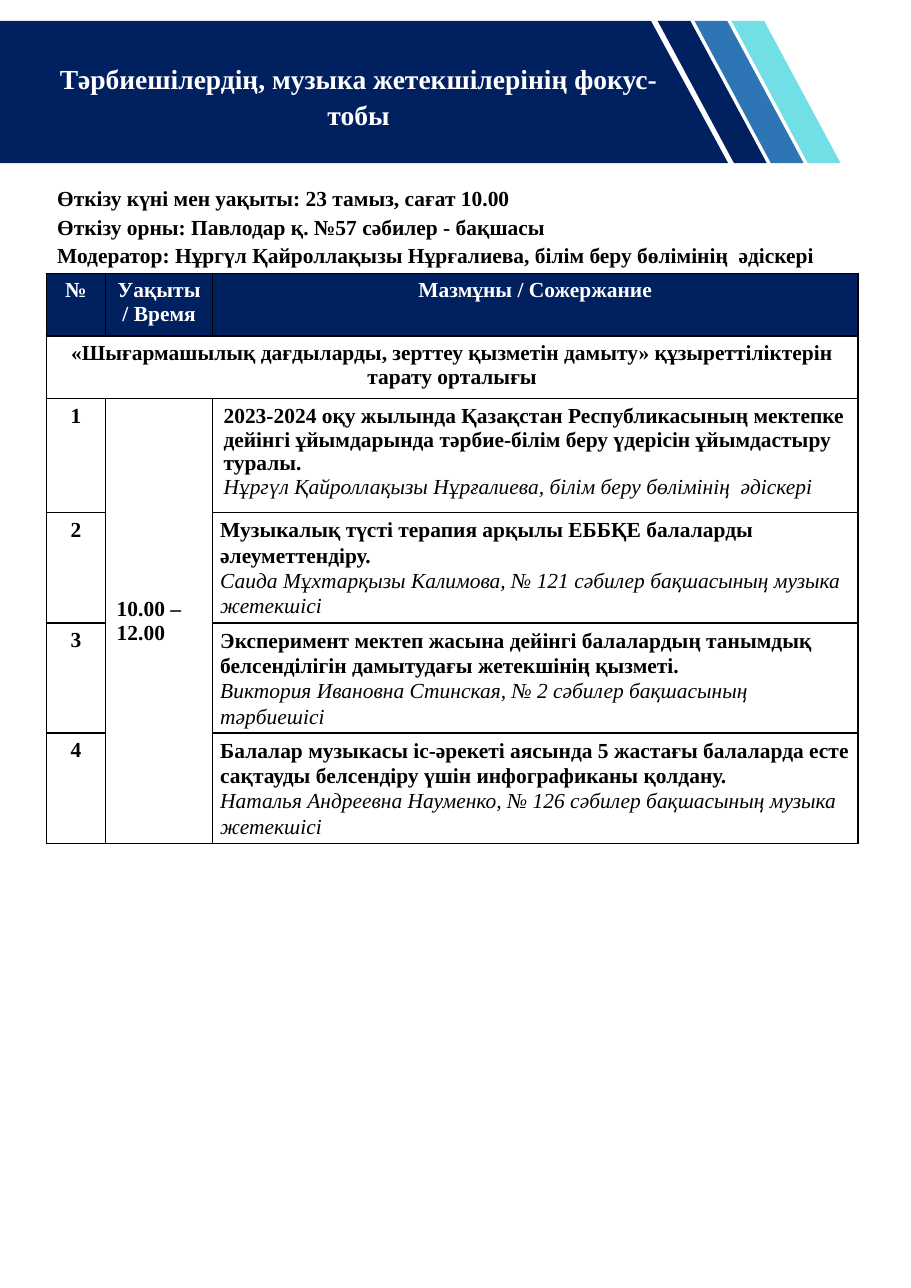
import pptx
import pptx.util
import pptx.dml.color
import pptx.enum.shapes
import pptx.enum.text
import pptx.oxml
import pptx.oxml.ns

Inches = pptx.util.Inches
ALIGN = pptx.enum.text.PP_ALIGN
ANCHOR = pptx.enum.text.MSO_ANCHOR

# Content
COLORS = {"navy": "002060", "blue": "2E75B6", "aqua": "71DFE5",
          "white": "FFFFFF", "black": "000000"}
FONT = "Times New Roman"
TITLE = "Тәрбиешілердің, музыка жетекшілерінің фокус-тобы"
DETAILS = [
    "Өткізу күні мен уақыты: 23 тамыз, сағат 10.00",
    "Өткізу орны: Павлодар қ. №57 сәбилер - бақшасы",
    "Модератор: Нұргүл Қайроллақызы Нұрғалиева, білім беру бөлімінің  әдіскері",
]
HEADERS = ["№", "Уақыты / Время", "Мазмұны / Сожержание"]
SECTION = ("«Шығармашылық дағдыларды, зерттеу қызметін дамыту» "
           "құзыреттіліктерін тарату орталығы")
TIME = "10.00 – 12.00"
TALKS = [
    ("2023-2024 оқу жылында Қазақстан Республикасының мектепке дейінгі "
     "ұйымдарында тәрбие-білім беру үдерісін ұйымдастыру туралы.",
     "Нұргүл Қайроллақызы Нұрғалиева, білім беру бөлімінің  әдіскері"),
    ("Музыкалық түсті терапия арқылы ЕББҚЕ балаларды әлеуметтендіру.",
     "Саида Мұхтарқызы Калимова, № 121 сәбилер бақшасының музыка жетекшісі"),
    ("Эксперимент мектеп жасына дейінгі балалардың танымдық белсенділігін "
     "дамытудағы жетекшінің қызметі.",
     "Виктория Ивановна Стинская, № 2 сәбилер бақшасының тәрбиешісі"),
    ("Балалар музыкасы іс-әрекеті аясында 5 жастағы балаларда есте сақтауды "
     "белсендіру үшін инфографиканы қолдану.",
     "Наталья Андреевна Науменко, № 126 сәбилер бақшасының музыка жетекшісі"),
]
COLUMN_WIDTHS = [0.54, 0.97, 5.86]
ROW_HEIGHTS = [0.57, 0.57, 1.03, 1, 1, 1]
BANNER_TOP, BANNER_HEIGHT = 0.19, 1.29
STRIPE_LEFT, STRIPE_STEP, STRIPE_WIDTH = 5.97, 0.335, 0.99


def rgb(name):
    return pptx.dml.color.RGBColor.from_string(COLORS[name])


def paint(shape, color):
    shape.shadow.inherit = False
    shape.fill.solid()
    shape.fill.fore_color.rgb = rgb(color)
    shape.line.fill.background()


def write(text_frame, lines, size=14, color="black", align=ALIGN.LEFT,
          spacing=None, italic_from=None):
    """Fill a frame with bold lines; lines from italic_from on are italic."""
    text_frame.text = "\n".join(lines)
    for index, paragraph in enumerate(text_frame.paragraphs):
        italic = italic_from is not None and index >= italic_from
        paragraph.alignment = align
        if spacing:
            paragraph.line_spacing = spacing
        for run in paragraph.runs:
            run.font.name = FONT
            run.font.size = pptx.util.Pt(size)
            run.font.bold = not italic
            run.font.italic = italic
            run.font.color.rgb = rgb(color)


def add_text(slide, left, top, width, height, lines, **style):
    box = slide.shapes.add_textbox(*map(Inches, (left, top, width, height)))
    box.text_frame.word_wrap = True
    write(box.text_frame, lines, spacing=1.1, **style)


def add_borders(cell):
    properties = cell._tc.get_or_add_tcPr()
    for index, side in enumerate(("lnL", "lnR", "lnT", "lnB")):
        properties.insert(index, pptx.oxml.parse_xml(
            f'<a:{side} {pptx.oxml.ns.nsdecls("a")} w="12700"><a:solidFill>'
            f'<a:srgbClr val="{COLORS["black"]}"/></a:solidFill></a:{side}>'))


def add_banner(slide):
    bottom = BANNER_TOP + BANNER_HEIGHT
    builder = slide.shapes.build_freeform(0, Inches(BANNER_TOP))
    corners = [(5.91, BANNER_TOP), (6.61, bottom), (0, bottom)]
    builder.add_line_segments([(Inches(x), Inches(y)) for x, y in corners])
    paint(builder.convert_to_shape(), "navy")

    # Slanted stripes
    for index, color in enumerate(("navy", "blue", "aqua")):
        stripe = slide.shapes.add_shape(
            pptx.enum.shapes.MSO_SHAPE.PARALLELOGRAM,
            Inches(STRIPE_LEFT + index * STRIPE_STEP), Inches(BANNER_TOP),
            Inches(STRIPE_WIDTH), Inches(BANNER_HEIGHT))
        stripe.adjustments[0] = 0.7
        stripe.element.spPr.find(pptx.oxml.ns.qn("a:xfrm")).set("flipV", "1")
        paint(stripe, color)

    add_text(slide, 0.19, 0.48, 6.13, 0.71, [TITLE], size=18, color="white",
             align=ALIGN.CENTER)


def add_programme(slide):
    table = slide.shapes.add_table(
        len(ROW_HEIGHTS), len(COLUMN_WIDTHS), Inches(0.42), Inches(2.48),
        Inches(sum(COLUMN_WIDTHS)), Inches(sum(ROW_HEIGHTS))).table
    table.first_row = table.horz_banding = False
    for column, width in zip(table.columns, COLUMN_WIDTHS):
        column.width = Inches(width)
    for row, height in zip(table.rows, ROW_HEIGHTS):
        row.height = Inches(height)

    # Fills and borders
    for row_index, row in enumerate(table.rows):
        for cell in row.cells:
            cell.fill.solid()
            cell.fill.fore_color.rgb = rgb("white" if row_index else "navy")
            add_borders(cell)

    # Header, section title and shared time slot
    for index, header in enumerate(HEADERS):
        write(table.cell(0, index).text_frame, [header], color="white",
              align=ALIGN.CENTER)
    table.cell(1, 0).merge(table.cell(1, 2))
    write(table.cell(1, 0).text_frame, [SECTION], align=ALIGN.CENTER)
    table.cell(2, 1).merge(table.cell(len(ROW_HEIGHTS) - 1, 1))
    table.cell(2, 1).vertical_anchor = ANCHOR.MIDDLE
    write(table.cell(2, 1).text_frame, [TIME])

    # Talks
    for number, talk in enumerate(TALKS, start=1):
        write(table.cell(number + 1, 0).text_frame, [str(number)],
              align=ALIGN.CENTER)
        cell = table.cell(number + 1, 2)
        if number > 1:
            cell.vertical_anchor = ANCHOR.MIDDLE
            cell.margin_left = cell.margin_right = Inches(0.07)
            cell.margin_top = cell.margin_bottom = 0
        write(cell.text_frame, talk, italic_from=1,
              spacing=1.07 if number > 1 else None)


def main():
    presentation = pptx.Presentation()
    presentation.slide_width = Inches(8.27)
    presentation.slide_height = Inches(11.69)
    slide = presentation.slides.add_slide(presentation.slide_layouts[6])
    add_banner(slide)
    add_programme(slide)
    add_text(slide, 0.42, 1.61, 7.39, 0.81, DETAILS)
    presentation.save("out.pptx")


if __name__ == "__main__":
    main()
